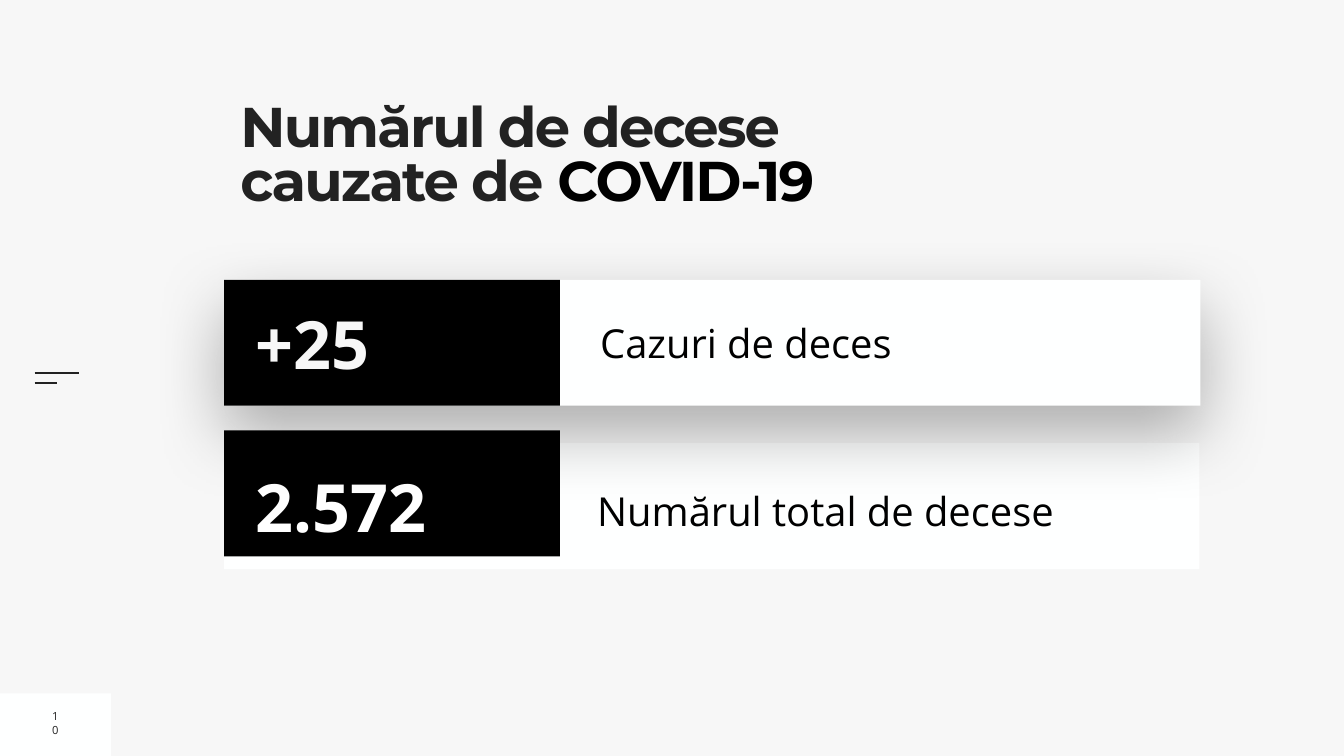
from lxml import etree
from pptx import Presentation
from pptx.dml.color import RGBColor
from pptx.enum.shapes import MSO_CONNECTOR, MSO_SHAPE
from pptx.enum.text import MSO_ANCHOR, PP_ALIGN
from pptx.oxml.ns import qn
from pptx.util import Cm, Pt

RECT = MSO_SHAPE.RECTANGLE
LINE = MSO_CONNECTOR.STRAIGHT
TOP, MID = MSO_ANCHOR.TOP, MSO_ANCHOR.MIDDLE
LEFT, CENTER = PP_ALIGN.LEFT, PP_ALIGN.CENTER

PALE = RGBColor(0xF7, 0xF7, 0xF7)
PANEL = RGBColor(0xFE, 0xFF, 0xFF)
WHITE = RGBColor(0xFF, 0xFF, 0xFF)
DARK = RGBColor(0x22, 0x22, 0x22)
BLACK = RGBColor(0, 0, 0)


def write(frame, text, size, color, font="Open Sans", bold=False, align=LEFT,
          anchor=MID, inset=0.25, leading=None, before=None, track=None):
    frame.word_wrap = True
    frame.vertical_anchor = anchor
    frame.margin_left = frame.margin_right = Cm(inset)
    frame.margin_top = frame.margin_bottom = Cm(inset)
    para = frame.paragraphs[0]
    para.alignment = align
    if leading is not None:
        para.line_spacing = leading
    if before is not None:
        para.space_before = Pt(before)
    run = para.add_run()
    run.text = text
    run.font.name = font
    run.font.size = Pt(size)
    run.font.bold = bold
    run.font.color.rgb = color
    if track is not None:
        run.font._element.set("spc", str(track))


def block(shapes, box, color):
    shape = shapes.add_shape(RECT, *map(Cm, box))
    shape.shadow.inherit = False
    shape.fill.solid()
    shape.fill.fore_color.rgb = color
    shape.line.fill.background()
    return shape


def label(shapes, box, text, size, color, **style):
    frame = shapes.add_textbox(*map(Cm, box)).text_frame
    write(frame, text, size, color, **style)


def glow(shape):
    effects = shape._element.spPr.find(qn("a:effectLst"))
    outer = etree.SubElement(effects, qn("a:outerShdw"), blurRad=str(Pt(100)),
                             dist=str(Pt(40)), dir="5400000", rotWithShape="0")
    tint = etree.SubElement(outer, qn("a:srgbClr"), val=str(BLACK))
    etree.SubElement(tint, qn("a:alpha"), val="30000")


def heading(slide, box):
    title = slide.shapes.title
    title.left, title.top, title.width, title.height = map(Cm, box)
    style = dict(font="Montserrat", bold=True, anchor=TOP, inset=0,
                 leading=0.8, before=0, track=-270)
    write(title.text_frame, "Numărul de decese cauzate de ", 80, DARK, **style)
    write(title.text_frame, "COVID-19", 80, BLACK, **style)


def menu(slide, box):
    left, top, width, gap = box
    for y, span in ((top, width), (top + gap, width / 2)):
        line = slide.shapes.add_connector(
            LINE, Cm(left), Cm(y), Cm(left + span), Cm(y))
        line.line.color.rgb = DARK
        line.line.width = Pt(3)
        etree.SubElement(line._element.spPr, qn("a:effectLst"))


def footer(slide, box):
    left, top, width, height = box
    block(slide.shapes, box, PANEL)
    label(slide.shapes, (left + 2.36, top + 0.84, 0.86, 1.3), "10", 16, DARK,
          align=CENTER)


def row(slide, box, count, name, shade=WHITE, rise=0, count_y=0.9,
        name_box=(18.7, 1.7, 29.87, 2.95), raised=False, **style):
    left, top, width, height = box
    x, y, w, h = name_box
    parts = slide.shapes.add_group_shape().shapes
    panel = block(parts, box, PANEL)
    if raised:
        glow(panel)
    label(parts, (left + x, top + y, w, h), name, 57, BLACK, **style)
    block(parts, (left, top - rise, 16.92, height), BLACK)
    label(parts, (left + 1.35, top + count_y, 15.32, 4.57), count, 95, shade,
          bold=True)


def main():
    deck = Presentation()
    deck.slide_width, deck.slide_height = Cm(67.74), Cm(38.1)
    slide = deck.slides.add_slide(deck.slide_layouts[5])
    slide.background.fill.solid()
    slide.background.fill.fore_color.rgb = PALE
    footer(slide, (0, 34.95, 5.59, 3.15))
    menu(slide, (1.75, 18.82, 2.24, 0.46))
    heading(slide, (12.12, 5.26, 33.05, 6.93))
    row(slide, (11.3, 22.33, 49.15, 6.35), "2.572", "Numărul total de decese",
        rise=0.64, name_box=(18.8, 1.62, 29.41, 2.84), inset=0,
        leading=1.3, before=20)
    row(slide, (11.3, 14.1, 49.2, 6.35), "+25", "Cazuri de deces",
        shade=PALE, raised=True)
    deck.save("out.pptx")


if __name__ == "__main__":
    main()
